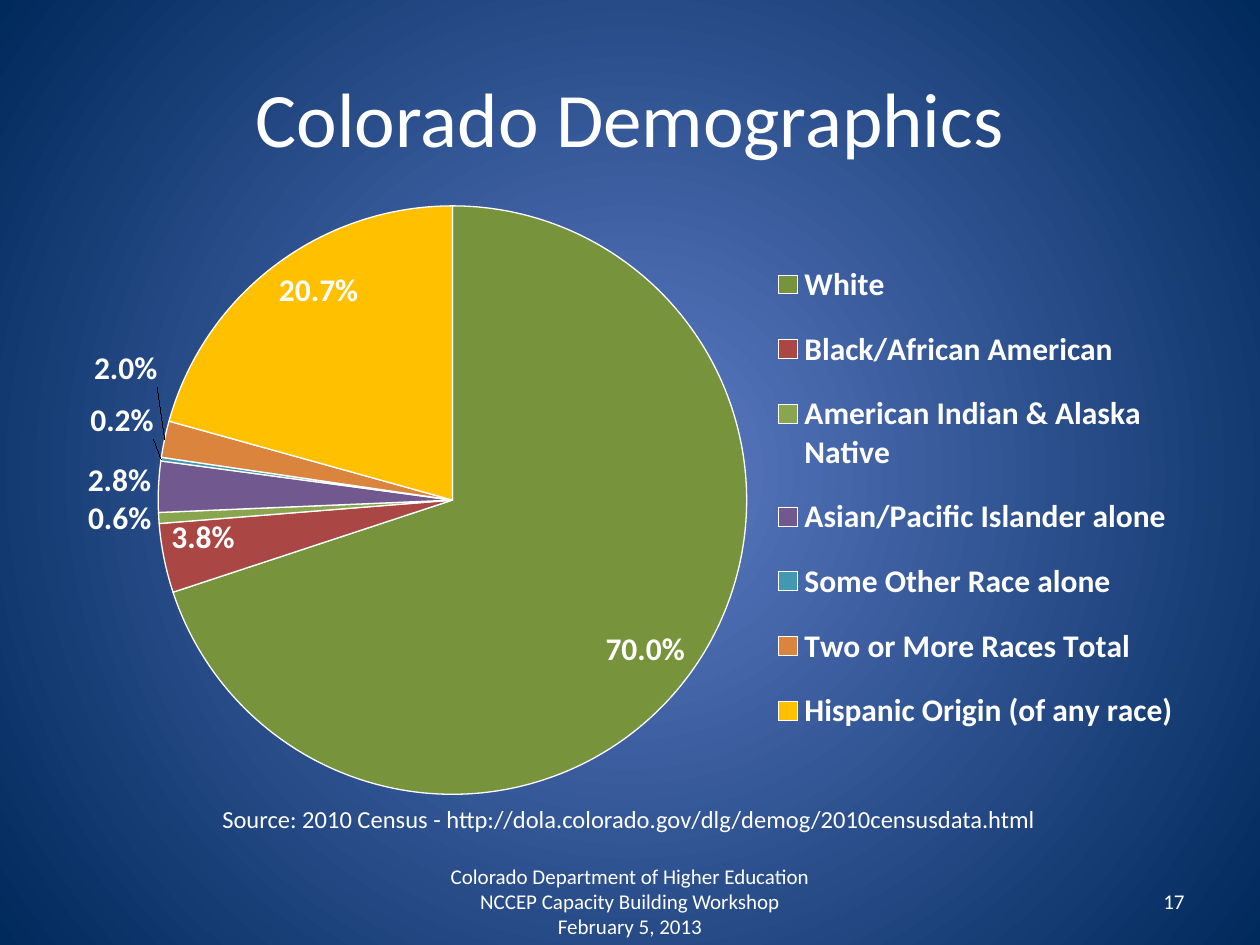
"""Build the Colorado Demographics slide with its pie chart."""
from lxml.etree import SubElement
from pptx import Presentation
from pptx.chart.data import CategoryChartData
from pptx.dml.color import RGBColor
from pptx.enum.chart import XL_CHART_TYPE, XL_LABEL_POSITION, XL_LEGEND_POSITION
from pptx.enum.text import MSO_ANCHOR, PP_ALIGN
from pptx.oxml import parse_xml
from pptx.oxml.ns import nsdecls, qn
from pptx.util import Pt

FONT, WHITE = "Calibri", "FFFFFF"
BACKGROUND = ["5E7CC5", "00295C"]
IN, OUT = XL_LABEL_POSITION.INSIDE_END, XL_LABEL_POSITION.OUTSIDE_END

# category, share, colour, label position, label shift down
SLICES = [
    ("White", 0.7, "77933C", IN, 0),
    ("Black/African American", 0.038, "AA4643", IN, 0),
    ("American Indian & Alaska Native", 0.006, "89A54E", OUT, 0),
    ("Asian/Pacific Islander alone", 0.028, "71588F", OUT, -0.01),
    ("Some Other Race alone", 0.002, "4198AF", OUT, -0.03),
    ("Two or More Races Total", 0.02, "DB843D", OUT, -0.08),
    ("Hispanic Origin (of any race)", 0.207, "FFC000", IN, 0),
]

# lines, box, size, alignment, anchor, wrap
TEXTS = [
    (["Colorado Demographics"], (36, 21.6, 648, 90), 44,
     PP_ALIGN.CENTER, MSO_ANCHOR.MIDDLE, True),
    (["Colorado Department of Higher Education",
      "NCCEP Capacity Building Workshop", "February 5, 2013"],
     (246, 500.5, 228, 28.8), 12, PP_ALIGN.CENTER, MSO_ANCHOR.MIDDLE, True),
    (["17"], (516, 500.5, 168, 28.8), 12,
     PP_ALIGN.RIGHT, MSO_ANCHOR.MIDDLE, True),
    (["Source: 2010 Census - http://dola.colorado.gov/dlg/demog/2010censusdata.html"],
     (120, 456, 484, 24.2), 14, PP_ALIGN.LEFT, MSO_ANCHOR.TOP, False),
]
CHART_BOX = (36, 108, 648, 356.4)
PIE_AREA = {"x": 0.084, "y": 0.027, "w": 0.519, "h": 0.944}
LEGEND_AREA = {"x": 0.62, "y": 0.08, "w": 0.37, "h": 0.83}


def rgb(color):
    return RGBColor.from_string(color)


def style(font, size, bold=False):
    font.name, font.size, font.bold = FONT, Pt(size), bold
    font.color.rgb = rgb(WHITE)


def layout(values, inner=False):
    target = '<c:layoutTarget val="inner"/>' if inner else ""
    modes = "".join(f'<c:{k}Mode val="edge"/>' for k in "xy") if "w" in values else ""
    sizes = "".join(f'<c:{k} val="{v}"/>' for k, v in values.items())
    return parse_xml(f'<c:layout {nsdecls("c")}><c:manualLayout>{target}{modes}{sizes}'
                     "</c:manualLayout></c:layout>")


def paint_background(s):
    fill = s.background.fill
    fill.gradient()
    for stop, color in zip(fill.gradient_stops, BACKGROUND):
        stop.color.rgb = rgb(color)
    grad = next(s.element.iter(qn("a:gradFill")))
    for lin in grad.findall(qn("a:lin")):
        grad.remove(lin)
    circle = SubElement(grad, qn("a:path"), {"path": "circle"})
    SubElement(circle, qn("a:fillToRect"), {side: "50000" for side in "ltrb"})


def add_text(s, lines, box, size, align, anchor, wrap):
    tf = s.shapes.add_textbox(*map(Pt, box)).text_frame
    tf.word_wrap, tf.vertical_anchor = wrap, anchor
    p = tf.paragraphs[0]
    p.alignment = align
    for i, line in enumerate(lines):
        if i:
            p.add_line_break()
        r = p.add_run()
        r.text = line
        style(r.font, size)


def add_pie(s):
    data = CategoryChartData(number_format="0.0%")
    data.categories = [row[0] for row in SLICES]
    data.add_series("Series 1", [row[1] for row in SLICES])
    chart = s.shapes.add_chart(XL_CHART_TYPE.PIE, *map(Pt, CHART_BOX), data).chart
    style(chart.font, 10)
    chart.has_title = False
    chart.has_legend = True
    legend = chart.legend
    legend.position = XL_LEGEND_POSITION.RIGHT
    legend.include_in_layout = False
    style(legend.font, 18, True)

    plot = chart.plots[0]
    plot.vary_by_categories = True
    series = plot.series[0]
    labels = series.data_labels
    labels.show_value = True
    labels.number_format, labels.number_format_is_linked = "0.0%", False
    style(labels.font, 18, True)
    for i, (_, _, color, position, shift) in enumerate(SLICES):
        point = series.points[i]
        point.format.fill.solid()
        point.format.fill.fore_color.rgb = rgb(color)
        point.format.line.color.rgb = rgb(WHITE)
        point.format.line.width = Pt(0.75)
        label = point.data_label
        style(label.font, 18, True)
        label.position = position
        if shift:
            dlbl = series.data_labels._element.findall(qn("c:dLbl"))[i]
            dlbl.insert(1, layout({"x": 0, "y": shift}))

    area = next(chart.element.iter(qn("c:plotArea")))
    for old in area.findall(qn("c:layout")):
        area.remove(old)
    area.insert(0, layout(PIE_AREA, inner=True))
    side = next(chart.element.iter(qn("c:legendPos")))
    for old in side.getparent().findall(qn("c:layout")):
        side.getparent().remove(old)
    side.addnext(layout(LEGEND_AREA))


def main():
    prs = Presentation()
    prs.slide_width, prs.slide_height = Pt(720), Pt(540)
    s = prs.slides.add_slide(prs.slide_layouts[6])
    paint_background(s)
    add_pie(s)
    for text in TEXTS:
        add_text(s, *text)
    prs.save("out.pptx")


if __name__ == "__main__":
    main()
